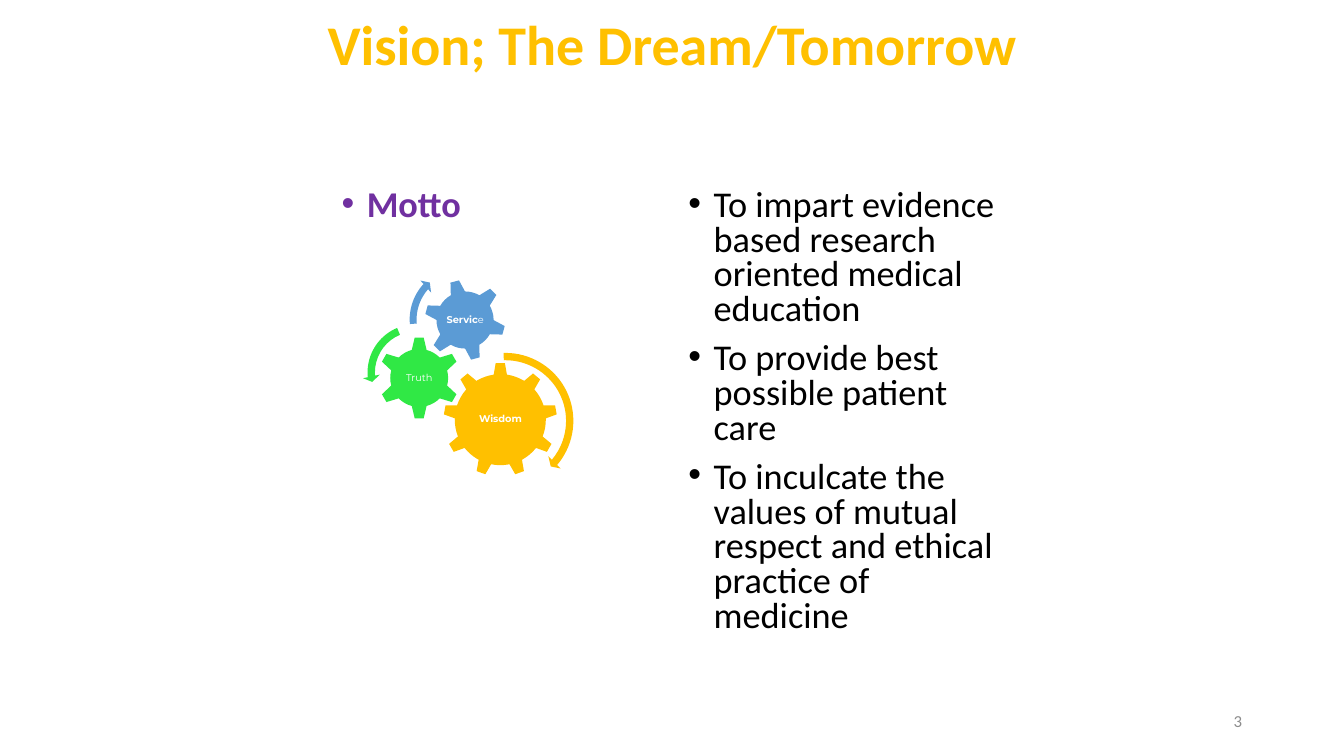
from lxml.etree import SubElement
from pptx import Presentation
from pptx.dml.color import RGBColor
from pptx.enum.shapes import MSO_SHAPE as Shape
from pptx.enum.text import MSO_ANCHOR as Anchor, PP_ALIGN as Align
from pptx.oxml.ns import qn
from pptx.util import Inches, Pt

COLORS = {
    "gold": "FFC000", "green": "30E845", "blue": "5B9BD5",
    "purple": "7030A0", "black": "000000", "white": "FFFFFF", "gray": "8C8C8C",
}
BOXES = {
    "gears": (27, 34.67, 17.25, 30.67),
    "motto": (24.68, 24.4, 25.36, 64.93),
    "goals": (50.49, 24.4, 24.91, 64.93),
    "title": (0, 0, 100, 11.47),
    "number": (70.66, 92.67, 22.5, 5.33),
}
GOALS = [
    "To impart evidence based research oriented medical education",
    "To provide best possible patient care",
    "To inculcate the values of mutual respect and ethical practice of medicine",
]
GEARS = [
    (Shape.GEAR_9, "gold", (59.3, 68, 49.1), 0, [("Wisdom", True)]),
    (Shape.GEAR_6, "green", (24.3, 50, 35.7), 0, [("Truth", False)]),
    (Shape.GEAR_6, "blue", (44.1, 25, 35.2), 345,
     [("Servic", True), ("e", False)]),
]
ARROWS = [
    (Shape.CIRCULAR_ARROW, "gold", (61.5, 68.5, 63),
     (0.05, 2.99, 24.12, 161.08, 0.06)),
    (Shape.LEFT_CIRCULAR_ARROW, "green", (22.8, 47.6, 45.7),
     (0.07, 4.3, 104.89, 148.38, 0.08)),
    (Shape.CIRCULAR_ARROW, "blue", (43, 24.8, 49.6),
     (0.06, 3.94, 133.14, 105.08, 0.07)),
]


def rgb(name):
    return RGBColor.from_string(COLORS[name])


def share(box, size):
    return [int(part * size[i % 2] / 100) for i, part in enumerate(box)]


def add_runs(p, runs, size, color, font="Calibri"):
    for text, bold in runs:
        r = p.add_run()
        r.text = text
        for key, value in dict(name=font, size=Pt(size), bold=bold).items():
            setattr(r.font, key, value)
        r.font.color.rgb = rgb(color)


def add_frame(s, box, **options):
    tf = s.shapes.add_textbox(*box).text_frame
    for key, value in dict(word_wrap=True, **options).items():
        setattr(tf, key, value)
    return tf


def add_line(s, box, text, size, color, align, bold=False):
    p = add_frame(s, box, vertical_anchor=Anchor.MIDDLE).paragraphs[0]
    p.alignment = align
    add_runs(p, [(text, bold)], size, color)


def add_bullets(s, box, items, color, bold=False):
    tf = add_frame(s, box)
    for i, item in enumerate(items):
        p = tf.add_paragraph() if i else tf.paragraphs[0]
        p.line_spacing, p.space_before = 0.8, Pt(10)
        add_runs(p, [(item, bold)], 25.9, color)
        pPr = p._p.get_or_add_pPr()
        pPr.set("marL", str(Inches(0.25)))
        pPr.set("indent", str(Inches(-0.25)))
        SubElement(pPr, qn("a:buFont")).set("typeface", "Arial")
        SubElement(pPr, qn("a:buChar")).set("char", "•")


def square(box, place, scale=1):
    left, top, side, _ = box
    x, y, d = (side * part / 100 for part in place)
    d *= scale
    return [int(v) for v in (left + x - d / 2, top + y - d / 2, d, d)]


def add_part(s, kind, box, color):
    sp = s.shapes.add_shape(kind, *box)
    sp.shadow.inherit = False
    sp.fill.solid()
    sp.fill.fore_color.rgb = rgb(color)
    sp.line.fill.background()
    return sp


def add_gears(s, box):
    margins = {f"margin_{side}": Inches(0.01)
               for side in ("left", "top", "right", "bottom")}
    for kind, color, place, turn, label in GEARS:
        add_part(s, kind, square(box, place), color).rotation = turn
        tf = add_frame(s, square(box, place, 0.55),
                       vertical_anchor=Anchor.MIDDLE, **margins)
        p = tf.paragraphs[0]
        p.alignment, p.line_spacing = Align.CENTER, 0.9
        add_runs(p, label, 7, "white", "Montserrat")
    for kind, color, place, bends in ARROWS:
        sp = add_part(s, kind, square(box, place), color)
        for i, bend in enumerate(bends):
            sp.adjustments[i] = bend


def main():
    prs = Presentation()
    prs.slide_width, prs.slide_height = Inches(13.33), Inches(7.5)
    s = prs.slides.add_slide(prs.slide_layouts[6])
    size = prs.slide_width, prs.slide_height
    boxes = {name: share(box, size) for name, box in BOXES.items()}
    add_gears(s, boxes["gears"])
    add_bullets(s, boxes["motto"], ["Motto"], "purple", True)
    add_bullets(s, boxes["goals"], GOALS, "black")
    add_line(s, boxes["title"], "Vision; The Dream/Tomorrow", 40, "gold",
             Align.CENTER, True)
    add_line(s, boxes["number"], "3", 12, "gray", Align.RIGHT)
    prs.save("out.pptx")


if __name__ == "__main__":
    main()
